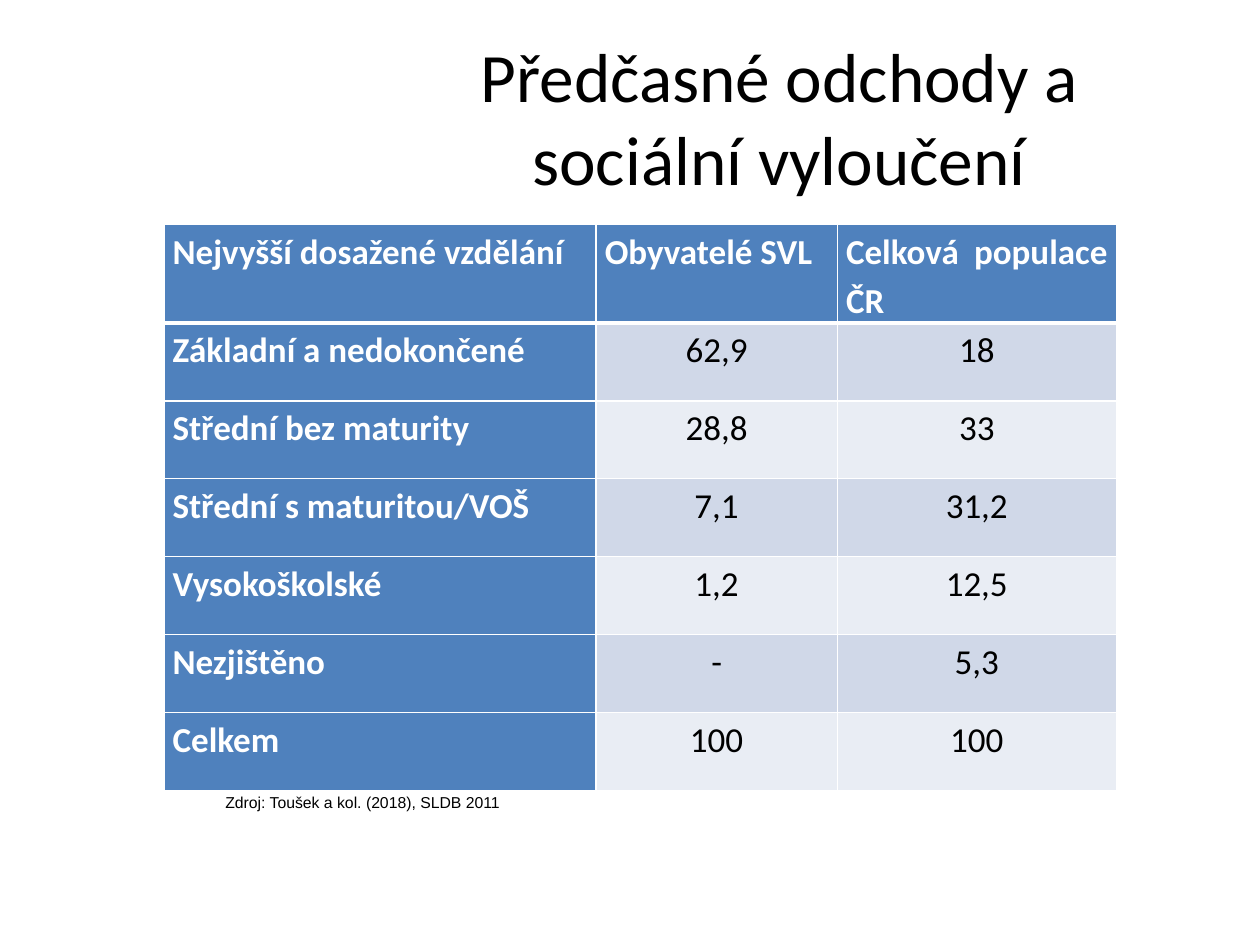
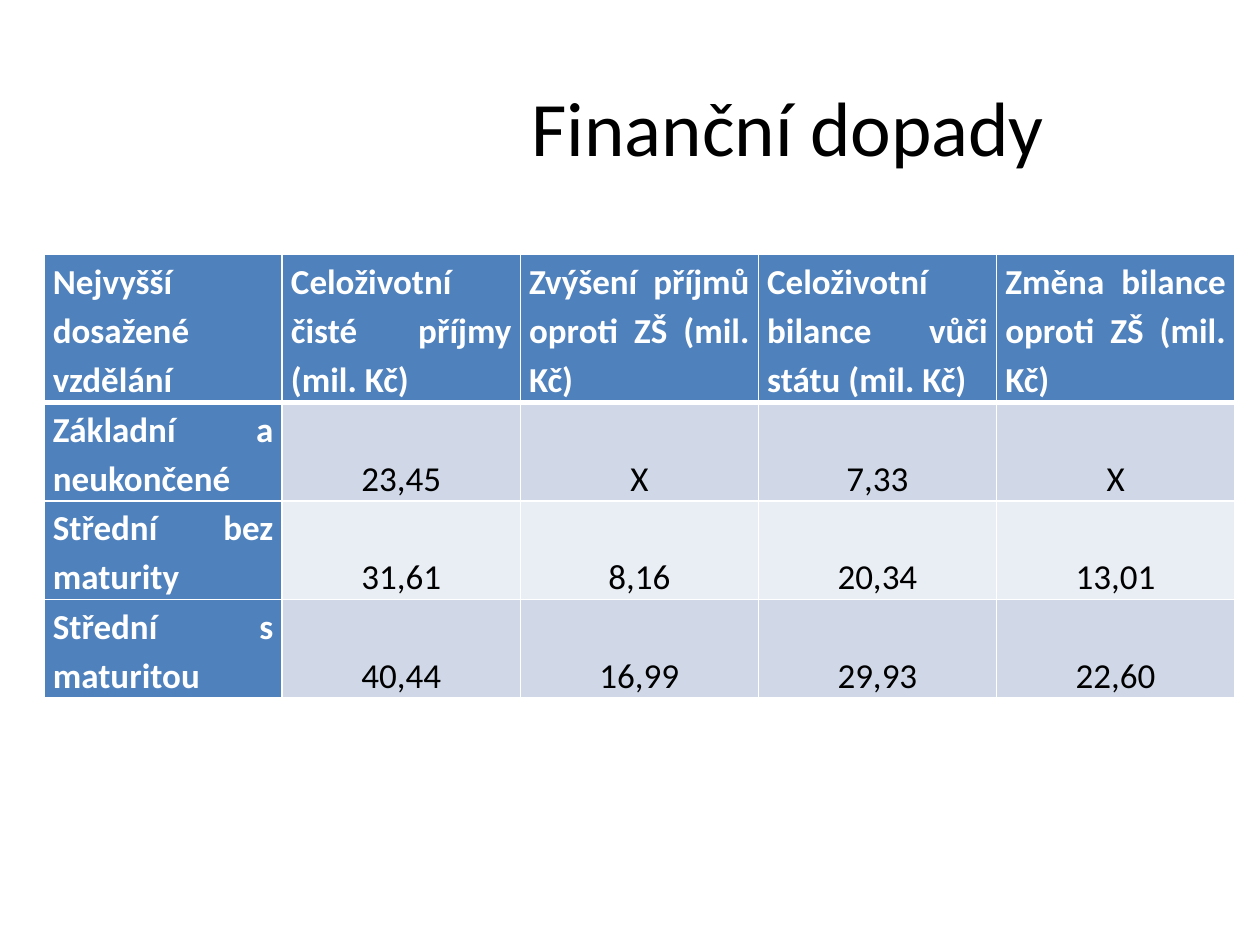
from pptx import Presentation
from pptx.dml.color import RGBColor
from pptx.enum.text import MSO_ANCHOR as Anchor, PP_ALIGN as Align
from pptx.oxml.ns import qn
from pptx.util import Inches, Pt
from lxml.etree import SubElement

# Shared look
WIDTH, HEIGHT = Inches(10), Inches(7.5)
WHITE, BLACK = "FFFFFF", "000000"
HEAD, BANDS = "4F81BD", ("D0D8E8", "E9EDF4")
CELL_MARGIN = Inches(0.07)

EDUCATION = [
    ["Nejvyšší dosažené vzdělání", "Obyvatelé SVL", "Celková populace ČR"],
    ["Základní a nedokončené", "62,9", "18"],
    ["Střední bez maturity", "28,8", "33"],
    ["Střední s maturitou/VOŠ", "7,1", "31,2"],
    ["Vysokoškolské", "1,2", "12,5"],
    ["Nezjištěno", "-", "5,3"],
    ["Celkem", "100", "100"],
]
FINANCES = [
    ["Nejvyšší dosažené vzdělání", "Celoživotní čisté příjmy (mil. Kč)",
     "Zvýšení příjmů oproti ZŠ (mil. Kč)",
     "Celoživotní bilance vůči státu (mil. Kč)",
     "Změna bilance oproti ZŠ (mil. Kč)"],
    ["Základní a neukončené", "23,45", "X", "7,33", "X"],
    ["Střední bez maturity", "31,61", "8,16", "20,34", "13,01"],
    ["Střední s maturitou", "40,44", "16,99", "29,93", "22,60"],
]


def across(percent):
    return round(WIDTH * percent / 100)


def down(percent):
    return round(HEIGHT * percent / 100)


def rgb(color):
    return RGBColor.from_string(color)


def write(tf, text, size=20, font="Calibri", color=BLACK, bold=False,
          align=Align.CENTER, spacing=None):
    p = tf.paragraphs[0]
    p.alignment = align
    if spacing:
        p.line_spacing = spacing
    r = p.add_run()
    r.text = text
    r.font.size, r.font.name, r.font.bold = Pt(size), font, bold
    r.font.color.rgb = rgb(color)


def place(sp, left, top, width, height):
    sp.left, sp.top = across(left), down(top)
    sp.width, sp.height = across(width), down(height)


def add_titled_slide(prs, title, box, size):
    s = prs.slides.add_slide(prs.slide_layouts[5])
    sp = s.shapes.title
    place(sp, *box)
    sp.text_frame.vertical_anchor = Anchor.MIDDLE
    write(sp.text_frame, title, size=size)
    return s


def set_borders(cell, top=1, bottom=1):
    tc_pr = cell._tc.get_or_add_tcPr()
    for side, width in (("L", 1), ("R", 1), ("T", top), ("B", bottom)):
        ln = SubElement(tc_pr, qn(f"a:ln{side}"), w=str(Pt(width)))
        fill = SubElement(ln, qn("a:solidFill"))
        SubElement(fill, qn("a:srgbClr"), val=WHITE)


def fill_cell(cell, text, row, col, anchor):
    is_head = row == 0 or col == 0
    # Thick line under the header row
    set_borders(cell, top=3 if row == 1 else 1, bottom=3 if row == 0 else 1)
    cell.fill.solid()
    cell.fill.fore_color.rgb = rgb(HEAD if is_head else BANDS[(row - 1) % 2])
    cell.margin_left = cell.margin_right = CELL_MARGIN
    cell.margin_top = cell.margin_bottom = 0
    cell.vertical_anchor = Anchor.TOP if is_head else anchor
    write(cell.text_frame, text, color=WHITE if is_head else BLACK,
          bold=is_head, align=Align.JUSTIFY if is_head else Align.CENTER,
          spacing=1.15)


def add_data_table(s, rows, left, top, col_widths, row_height,
                   anchor=Anchor.TOP):
    table = s.shapes.add_table(
        len(rows), len(col_widths), across(left), down(top),
        across(sum(col_widths)), down(row_height * len(rows))).table
    for column, width in zip(table.columns, col_widths):
        column.width = across(width)
    for i, texts in enumerate(rows):
        table.rows[i].height = down(row_height)
        for j, text in enumerate(texts):
            fill_cell(table.cell(i, j), text, i, j, anchor)


def add_source(s, text, left, top, height):
    sp = s.shapes.add_textbox(across(left), down(top),
                              across(100 - left), down(height))
    tf = sp.text_frame
    tf.word_wrap = True
    tf.vertical_anchor = Anchor.MIDDLE
    write(tf, text, size=9, font="Arial", align=Align.JUSTIFY)


def main():
    prs = Presentation()
    prs.slide_width, prs.slide_height = WIDTH, HEIGHT

    # Education of the two populations
    s = add_titled_slide(prs, "Předčasné odchody a sociální vyloučení",
                         (28.7, 4, 66.3, 16.67), 39.6)
    add_data_table(s, EDUCATION, 13, 23.73, (34.3, 19.15, 22.15), 8.25)
    add_source(s, "Zdroj: Toušek a kol. (2018), SLDB 2011", 16.9, 81.5, 6.67)

    # Lifetime income and balance
    s = add_titled_slide(prs, "Finanční dopady",
                         (28.7, 4.93, 67.7, 16.67), 44)
    add_data_table(s, FINANCES, 3.5, 26.93, [18.9] * 5, 9.47, Anchor.BOTTOM)

    prs.save("out.pptx")


if __name__ == "__main__":
    main()
